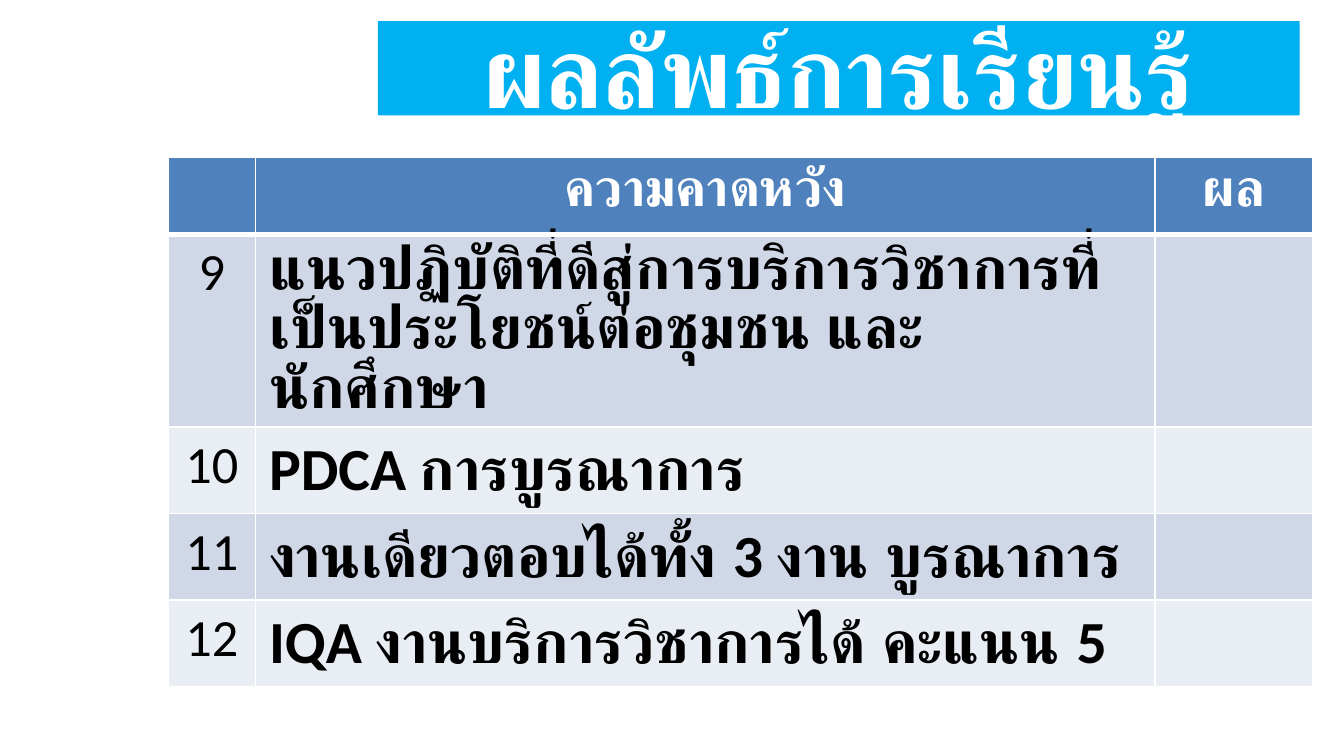
from lxml import etree
from pptx import Presentation
from pptx.dml.color import RGBColor
from pptx.enum.lang import MSO_LANGUAGE_ID as Lang
from pptx.enum.text import MSO_ANCHOR as Anchor, MSO_AUTO_SIZE as AutoSize, PP_ALIGN as Align
from pptx.oxml.ns import qn
from pptx.util import Cm, Pt

WHITE, BLACK = "FFFFFF", "000000"
HEADER, BANDS = "4F81BD", ("D0D8E8", "E9EDF4")
COL_WIDTHS = (1.65, 17.0, 2.98)
ROW_HEIGHTS = (1.45, 3.64, 1.63, 1.63, 1.63)
ROWS = [
    ("", "ความคาดหวัง", "ผล"),
    ("9", "แนวปฏิบัติที่ดีสู่การบริการวิชาการที่เป็นประโยชน์ต่อชุมชน และนักศึกษา", ""),
    ("10", "PDCA การบูรณาการ", ""),
    ("11", "งานเดียวตอบได้ทั้ง 3 งาน บูรณาการ", ""),
    ("12", "IQA งานบริการวิชาการได้ คะแนน 5", ""),
]


def set_fill(fill, color):
    fill.solid()
    fill.fore_color.rgb = RGBColor.from_string(color)


def set_text(tf, text, size=28, color=BLACK, bold=False, align=Align.CENTER):
    p = tf.paragraphs[0]
    p.alignment = align
    r = p.add_run()
    r.text = text
    f = r.font
    f.name, f.size, f.bold = "Calibri", Pt(size), bold
    f.language_id = Lang.THAI
    f.color.rgb = RGBColor.from_string(color)


def set_borders(cell, **widths):
    """Draw white borders; keys are l, r, t, b and widths are in points."""
    tc_pr = cell._tc.get_or_add_tcPr()
    for i, (side, width) in enumerate(widths.items()):
        ln = etree.Element(qn(f"a:ln{side.upper()}"), w=str(Pt(width)))
        solid = etree.SubElement(ln, qn("a:solidFill"))
        etree.SubElement(solid, qn("a:srgbClr"), val=WHITE)
        tc_pr.insert(i, ln)


def add_title(s, text):
    sp = s.shapes.title
    sp.left, sp.top, sp.width, sp.height = Cm(7.14), Cm(0.4), Cm(17.42), Cm(1.78)
    set_fill(sp.fill, "00B0F0")
    tf = sp.text_frame
    tf.auto_size = AutoSize.NONE
    tf.word_wrap = True
    tf.vertical_anchor = Anchor.MIDDLE
    set_text(tf, text, size=54, color=WHITE, bold=True)


def add_outcome_table(s):
    table = s.shapes.add_table(len(ROWS), len(COL_WIDTHS), Cm(3.18), Cm(2.98),
                               Cm(sum(COL_WIDTHS)), Cm(sum(ROW_HEIGHTS))).table
    for column, width in zip(table.columns, COL_WIDTHS):
        column.width = Cm(width)
    for i, (row, height, texts) in enumerate(zip(table.rows, ROW_HEIGHTS, ROWS)):
        row.height = Cm(height)
        header = i == 0
        for j, (cell, text) in enumerate(zip(row.cells, texts)):
            set_fill(cell.fill, HEADER if header else BANDS[(i - 1) % 2])
            set_borders(cell, l=1, r=1, t=3 if i == 1 else 1, b=3 if header else 1)
            if not text:
                continue
            if header:
                set_text(cell.text_frame, text, color=WHITE, bold=True)
            elif j == 1:
                set_text(cell.text_frame, text, size=32, bold=True, align=Align.LEFT)
            else:
                set_text(cell.text_frame, text)


def main():
    prs = Presentation()
    prs.slide_width, prs.slide_height = Cm(25.4), Cm(14.29)
    s = prs.slides.add_slide(prs.slide_layouts[5])  # title only
    add_title(s, "ผลลัพธ์การเรียนรู้")
    add_outcome_table(s)
    prs.save("out.pptx")


if __name__ == "__main__":
    main()
